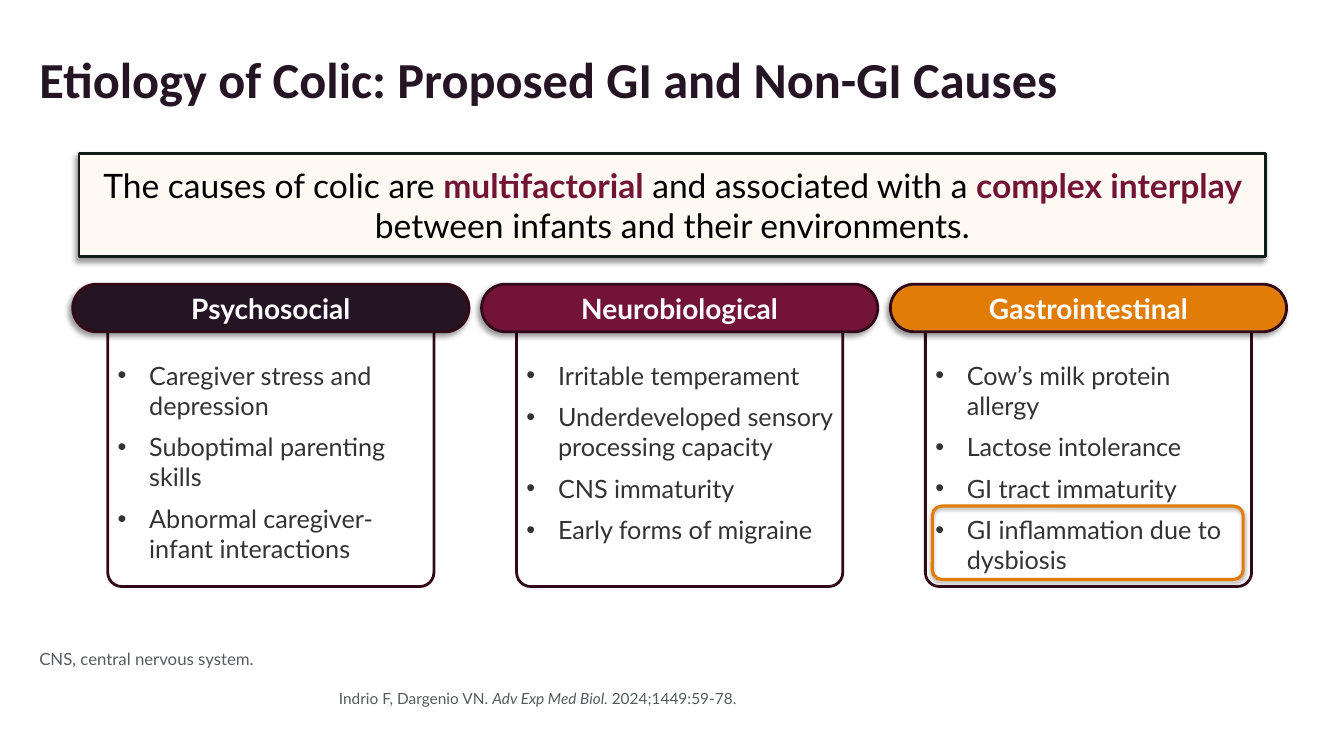
from lxml.etree import SubElement
from pptx import Presentation
from pptx.dml.color import RGBColor
from pptx.enum.shapes import MSO_SHAPE
from pptx.enum.text import MSO_ANCHOR, MSO_AUTO_SIZE, PP_ALIGN
from pptx.oxml.ns import qn
from pptx.util import Pt

COLORS = {
    "plum": "251423", "wine": "731436", "orange": "E17D07", "border": "320918",
    "cream": "FFF9F3", "green": "101C15", "white": "FFFFFF", "black": "000000",
    "text": "333333", "note": "565B5D",
}


class SlideBuilder:
    font = "Lato"

    def __init__(self, slide):
        self.slide = slide
        self.shapes = slide.shapes

    def color(self, name):
        return RGBColor.from_string(COLORS[name])

    def start_group(self):
        self.shapes = self.slide.shapes.add_group_shape().shapes

    def end_group(self):
        self.shapes = self.slide.shapes

    def add_runs(self, p, runs, size, color, font=None):
        """Each run is (text, changes), changes being bold, italic or color."""
        for text, changes in runs:
            r = p.add_run()
            r.text = text
            r.font.name = font or self.font
            r.font.size = Pt(size)
            r.font.bold = changes.get("bold", False)
            r.font.italic = changes.get("italic", False)
            r.font.color.rgb = self.color(changes.get("color", color))

    def title(self, text, box):
        sp = self.slide.shapes.title
        sp.left, sp.top, sp.width, sp.height = map(Pt, box)
        tf = sp.text_frame
        tf.auto_size = MSO_AUTO_SIZE.NONE
        tf.vertical_anchor = MSO_ANCHOR.MIDDLE
        p = tf.paragraphs[0]
        p.alignment = PP_ALIGN.LEFT
        p.line_spacing = 0.9
        self.add_runs(p, [(text, {"bold": True})], 36, "plum", "Calibri")

    def text_box(self, box):
        tf = self.shapes.add_textbox(*map(Pt, box)).text_frame
        tf.word_wrap = True
        return tf

    def note(self, runs, box, size, anchor=MSO_ANCHOR.TOP):
        tf = self.text_box(box)
        tf.vertical_anchor = anchor
        p = tf.paragraphs[0]
        p.line_spacing = 0.9
        self.add_runs(p, runs, size, "note")

    def bullets(self, items, box):
        tf = self.text_box(box)
        for i, item in enumerate(items):
            p = tf.paragraphs[0] if i == 0 else tf.add_paragraph()
            p.space_after = Pt(8)
            self.add_runs(p, [(item, {})], 18, "text")
            pPr = p._p.get_or_add_pPr()
            pPr.set("marL", str(Pt(22.5)))
            pPr.set("indent", str(-Pt(22.5)))
            SubElement(pPr, qn("a:buFont"), typeface="Arial")
            SubElement(pPr, qn("a:buChar"), char="•")

    def panel(self, kind, box, fill, line, width=2, radius=None, shadow=None):
        sp = self.shapes.add_shape(kind, *map(Pt, box))
        if radius is not None:
            sp.adjustments[0] = radius
        if fill:
            sp.fill.solid()
            sp.fill.fore_color.rgb = self.color(fill)
        else:
            sp.fill.background()
        sp.line.color.rgb = self.color(line)
        sp.line.width = Pt(width)
        sp.shadow.inherit = False
        if shadow:
            self.cast_shadow(sp, *shadow)
        return sp

    def cast_shadow(self, sp, opacity, blur, distance, angle):
        effects = sp._element.spPr.find(qn("a:effectLst"))
        outer = SubElement(effects, qn("a:outerShdw"), blurRad=str(Pt(blur)),
                           dist=str(Pt(distance)), dir=str(angle * 60000),
                           rotWithShape="0")
        clr = SubElement(outer, qn("a:srgbClr"), val=COLORS["black"])
        SubElement(clr, qn("a:alpha"), val=str(opacity * 1000))

    def label(self, sp, runs, size, color):
        tf = sp.text_frame
        tf.word_wrap = True
        tf.vertical_anchor = MSO_ANCHOR.MIDDLE
        p = tf.paragraphs[0]
        p.alignment = PP_ALIGN.CENTER
        self.add_runs(p, runs, size, color)


SOFT_SHADOW = (40, 4, 3, 135)
COLUMN_PITCH = 292
CAUSES = [
    ("Psychosocial", "plum", [
        "Caregiver stress and depression",
        "Suboptimal parenting skills",
        "Abnormal caregiver-infant interactions"]),
    ("Neurobiological", "wine", [
        "Irritable temperament",
        "Underdeveloped sensory processing capacity",
        "CNS immaturity",
        "Early forms of migraine"]),
    ("Gastrointestinal", "orange", [
        "Cow’s milk protein allergy",
        "Lactose intolerance",
        "GI tract immaturity",
        "GI inflammation due to dysbiosis"]),
]


def main():
    prs = Presentation()
    prs.slide_width, prs.slide_height = Pt(960), Pt(540)
    s = SlideBuilder(prs.slides.add_slide(prs.slide_layouts[5]))

    # Title, citation and abbreviation
    s.title("Etiology of Colic: Proposed GI and Non-GI Causes", (21, 13.5, 920, 90))
    s.note([("Indrio F, Dargenio VN. ", {}),
            ("Adv Exp Med Biol. ", {"italic": True}),
            ("2024;1449:59-78.", {})], (235, 490.5, 705, 45), 11)
    s.note([("CNS, central nervous system.", {})], (21, 454.5, 920, 27), 12,
           MSO_ANCHOR.BOTTOM)

    # Key message
    key = {"bold": True, "color": "wine"}
    banner = s.panel(MSO_SHAPE.RECTANGLE, (56.5, 109.5, 847.5, 74), "cream", "green",
                     shadow=SOFT_SHADOW)
    s.label(banner, [("The causes of colic are ", {}), ("multifactorial", key),
                     (" and associated with a ", {}), ("complex interplay ", key),
                     ("between infants and their environments.", {})], 24, "black")

    # One column per kind of cause
    for i, (heading, fill, items) in enumerate(CAUSES):
        x = 52 + i * COLUMN_PITCH
        s.start_group()
        s.panel(MSO_SHAPE.ROUNDED_RECTANGLE, (x + 25, 217.5, 233, 201.5), "white",
                "border", radius=0.05)
        pill = s.panel(MSO_SHAPE.ROUNDED_RECTANGLE, (x, 203, 283, 34), fill, "border",
                       radius=0.5, shadow=SOFT_SHADOW)
        s.label(pill, [(heading, {"bold": True})], 20, "white")
        s.bullets(items, (x + 25, 253.5, 233, 160))
    s.end_group()

    # Frame around the last gastrointestinal cause
    s.panel(MSO_SHAPE.ROUNDED_RECTANGLE, (666, 361.5, 222, 52.5), None, "orange",
            width=2.25, radius=0.13, shadow=(35, 3.1, 1.8, 90))

    prs.save("out.pptx")


if __name__ == "__main__":
    main()
